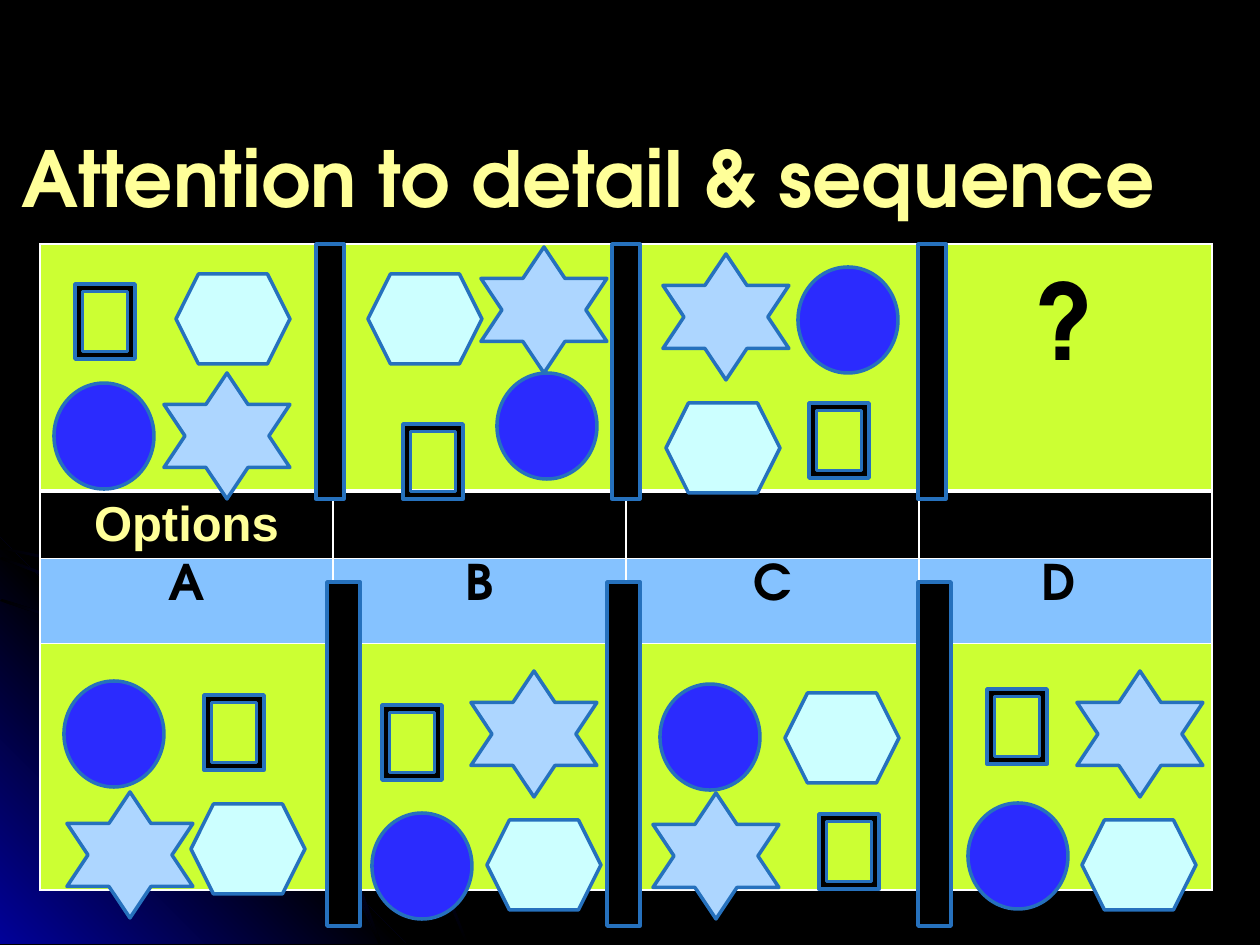
from lxml.etree import SubElement
from pptx import Presentation
from pptx.dml.color import RGBColor
from pptx.enum.shapes import MSO_SHAPE
from pptx.enum.text import MSO_ANCHOR, MSO_AUTO_SIZE, PP_ALIGN
from pptx.oxml import parse_xml
from pptx.oxml.ns import nsdecls, qn
from pptx.util import Pt

PX = 914400 / 126
BLACK, WHITE, NAVY, EDGE = "000000", "FFFFFF", "010199", "2671BD"
LIME, SKY, CREAM = "CCFF33", "85C2FF", "FFFF99"
FONT = "TeX Gyre Adventor"


def px(*vals):
    """Turn px lengths into EMU."""
    return [round(v * PX) for v in vals]


def rgb(code):
    return RGBColor.from_string(code)


deck = Presentation()
deck.slide_width, deck.slide_height = px(1260, 945)
slide = deck.slides.add_slide(deck.slide_layouts[5])
shapes = slide.shapes
slide.background.fill.solid()
slide.background.fill.fore_color.rgb = rgb(BLACK)

# Corner glow: a triangle, three thin arcs and three dots
arcs = [
    [(0, 549), (71, 564), (122, 580), (170, 601), (218, 627), (262, 658),
     (303, 692), (340, 728), (378, 771), (409, 817), (440, 880), (466, 944)],
    [(0, 601), (49, 617), (97, 639), (145, 665), (189, 694), (231, 728),
     (268, 766), (302, 808), (334, 853), (359, 900), (379, 944)],
    [(0, 559), (45, 576), (93, 598), (137, 622), (179, 653), (218, 685),
     (255, 724), (286, 762), (318, 808), (336, 840), (353, 874), (379, 944)],
]
arc_tone = [BLACK, NAVY, BLACK]
glow = [([(0, 538), (406, 944), (0, 944)], [NAVY, BLACK, NAVY], 315)]
for arc in arcs:
    back = [(x + 2, y - 2) for x, y in reversed(arc)]
    glow.append((arc + back, arc_tone, 45))
parts = []
for path_pts, tones, angle in glow:
    pen = shapes.build_freeform(*path_pts[0], scale=PX)
    pen.add_line_segments(path_pts[1:], close=True)
    parts.append((pen.convert_to_shape(), tones, angle))
for x, y, size, angle in [(45, 609, 19, 315), (336, 849, 20, 45),
                          (173, 596, 26, 315)]:
    dot = shapes.add_shape(MSO_SHAPE.OVAL, *px(x, y, size, size))
    parts.append((dot, [NAVY, BLACK], angle))
for part, tones, angle in parts:
    part.shadow.inherit = False
    part.line.fill.background()
    stops = "".join(
        f'<a:gs pos="{100000 * i // (len(tones) - 1)}">'
        f'<a:srgbClr val="{tone}"/></a:gs>' for i, tone in enumerate(tones))
    grad = parse_xml(
        f'<a:gradFill {nsdecls("a")} rotWithShape="1"><a:gsLst>{stops}</a:gsLst>'
        f'<a:lin ang="{angle * 60000}" scaled="0"/></a:gradFill>')
    part._element.spPr.find(qn("a:ln")).addprevious(grad)

# Title
title = shapes.title
title.left, title.top, title.width, title.height = px(9, 38, 1197, 157)
frame = title.text_frame
frame.auto_size = MSO_AUTO_SIZE.NONE
frame.word_wrap = True
frame.vertical_anchor = MSO_ANCHOR.TOP
frame.margin_top, frame.margin_bottom = px(92, 0)
para = frame.paragraphs[0]
para.alignment = PP_ALIGN.LEFT
run = para.add_run()
run.text = "Attention to detail & sequence"
run.font.name, run.font.size, run.font.bold = FONT, Pt(44.1), True
run.font.color.rgb = rgb(CREAM)

# Table of the sequence and its options
table = shapes.add_table(4, 4, *px(40, 244, 1172, 646)).table
for col in table.columns:
    col.width = px(293)[0]
for row, high in zip(table.rows, [247, 67, 85, 247]):
    row.height = px(high)[0]
fills = [LIME, BLACK, SKY, LIME]
words = {(0, 3): ("?", 60, FONT, BLACK), (1, 0): ("Options", 28, "Arial", CREAM)}
for c, word in enumerate(["A", "B", "C", "D "]):
    words[2, c] = (word, 28, FONT, BLACK)
for r, tone in enumerate(fills):
    for c in range(4):
        cell = table.cell(r, c)
        props = cell._tc.get_or_add_tcPr()
        for side in ["lnL", "lnR", "lnT", "lnB"]:
            thick = (r, side) in [(0, "lnB"), (1, "lnT")]
            edge = SubElement(props, qn(f"a:{side}"), w=str(Pt(3 if thick else 1)))
            paint = SubElement(edge, qn("a:solidFill"))
            SubElement(paint, qn("a:srgbClr"), val=WHITE)
        cell.fill.solid()
        cell.fill.fore_color.rgb = rgb(tone)
        if (r, c) in words:
            text, size, face, ink = words[r, c]
            para = cell.text_frame.paragraphs[0]
            para.alignment = PP_ALIGN.CENTER
            run = para.add_run()
            run.text = text
            run.font.name, run.font.size, run.font.bold = face, Pt(size), True
            run.font.color.rgb = rgb(ink)
table.cell(0, 3).margin_top = px(39)[0]

# Figures and dividers: kind, width, height, fill, places
figures = [
    (MSO_SHAPE.OVAL, 100, 106, "2B2BFE",
     [(54, 383), (497, 373), (798, 267), (64, 681), (372, 813), (660, 684), (968, 803)]),
    (MSO_SHAPE.STAR_6_POINT, 126, 126, "ADD6FF",
     [(164, 373), (481, 247), (663, 254), (67, 792), (471, 671), (653, 793), (1077, 671)]),
    (MSO_SHAPE.HEXAGON, 114, 90, "CCFFFF",
     [(176, 274), (368, 274), (666, 403), (191, 804), (487, 820), (785, 693), (1082, 820)]),
    (MSO_SHAPE.RECTANGLE, 28, 255, BLACK, [(316, 244), (612, 244), (918, 244)]),
    (MSO_SHAPE.RECTANGLE, 33, 344, BLACK, [(327, 582), (607, 582), (918, 582)]),
    (MSO_SHAPE.FRAME, 60, 75, BLACK,
     [(75, 284), (403, 424), (809, 403), (204, 695), (382, 705), (819, 814), (987, 689)]),
]
for kind, wide, high, tone, spots in figures:
    for x, y in spots:
        fig = shapes.add_shape(kind, *px(x, y, wide, high))
        fig.shadow.inherit = False
        fig.fill.solid()
        fig.fill.fore_color.rgb = rgb(tone)
        fig.line.color.rgb = rgb(EDGE)
        fig.line.width = Pt(2)

deck.save("out.pptx")
